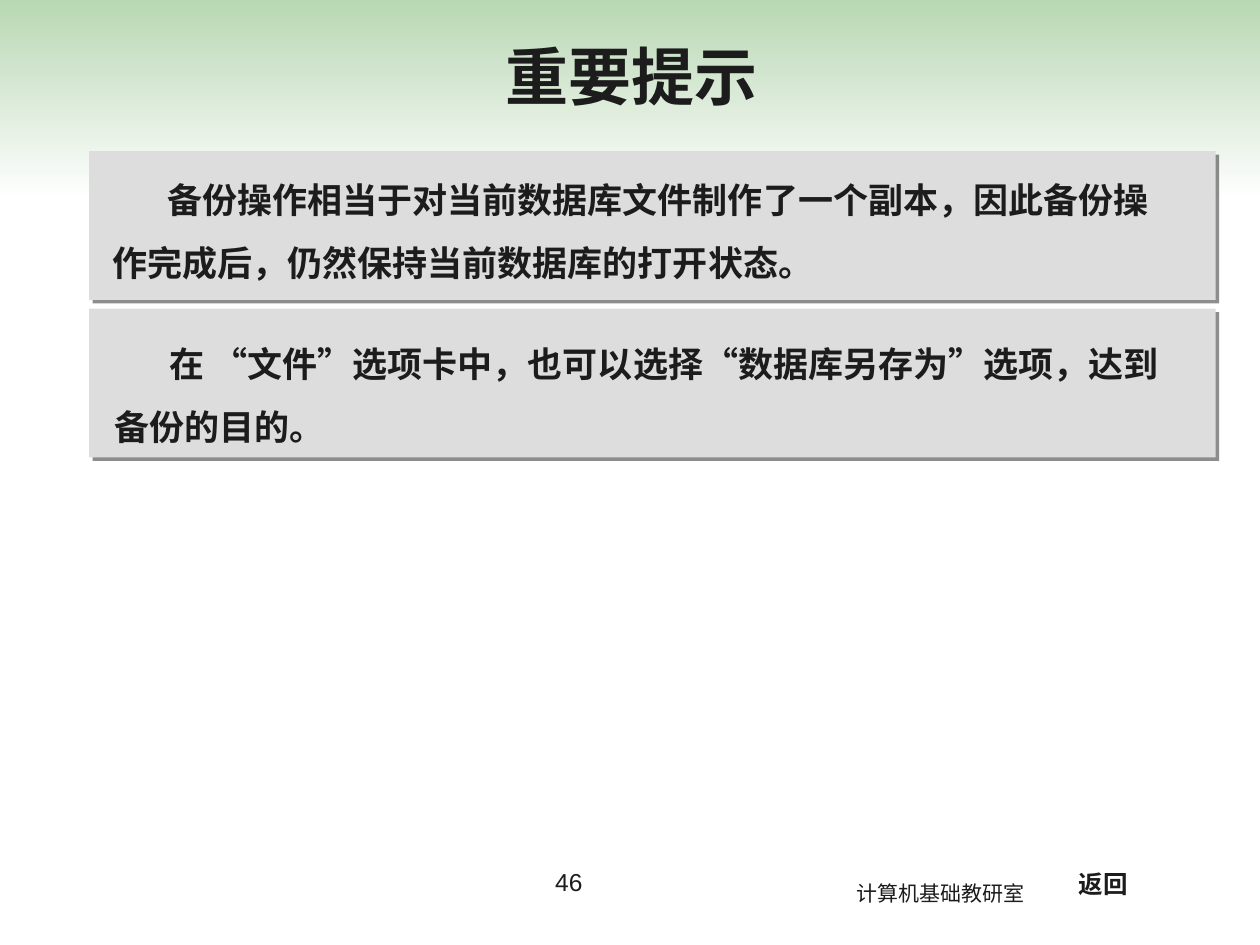
from lxml.etree import SubElement as Sub
from pptx import Presentation
from pptx.dml.color import RGBColor
from pptx.enum.shapes import MSO_SHAPE as Kind
from pptx.enum.text import MSO_ANCHOR as Anchor, PP_ALIGN as Align
from pptx.oxml.ns import qn
from pptx.util import Pt

INK = "1C1C1C"
CJK = "Noto Sans CJK JP"


def paint(color, code):
    color.rgb = RGBColor.from_string(code)


def add_rect(slide, left, top, width, height):
    rect = slide.shapes.add_shape(Kind.RECTANGLE, Pt(left), Pt(top), Pt(width), Pt(height))
    rect.shadow.inherit = False
    rect.line.fill.background()
    return rect


def add_fade(slide):
    rect = add_rect(slide, 0, 0, 720, 113)
    rect.fill.gradient()
    rect.fill.gradient_angle = 270
    for stop, code, place in zip(rect.fill.gradient_stops, ("4E9D41", "FFFFFF"), (0, 1)):
        paint(stop.color, code)
        stop.position = place
    for color in rect._element.spPr.iter(qn("a:srgbClr")):
        Sub(color, qn("a:alpha"), val="40000")


def add_panel(slide, top):
    rect = add_rect(slide, 51, top, 643.7, 85)
    rect.fill.solid()
    paint(rect.fill.fore_color, "DDDDDD")
    effects = rect._element.spPr.find(qn("a:effectLst"))
    shade = Sub(effects, qn("a:outerShdw"), dist=str(Pt(2.8)), dir="2700000", algn="ctr")
    color = Sub(shade, qn("a:srgbClr"), val=INK)
    Sub(color, qn("a:alpha"), val="50000")


def add_text(slide, text, left, top, width, height, size, bold=False,
             align=Align.CENTER, anchor=Anchor.TOP, font="Arial"):
    box = slide.shapes.add_textbox(Pt(left), Pt(top), Pt(width), Pt(height))
    frame = box.text_frame
    frame.word_wrap = True
    frame.vertical_anchor = anchor
    para = frame.paragraphs[0]
    para.alignment = align
    run = para.add_run()
    run.text = text
    run.font.size = Pt(size)
    run.font.bold = bold
    paint(run.font.color, INK)
    run.font.name = font
    Sub(run._r.get_or_add_rPr(), qn("a:ea"), typeface=CJK)
    return para


def add_body(slide, text, left, top, width):
    para = add_text(slide, text, left, top, width, 80, 20, True, Align.LEFT)
    para.line_spacing = 1.5
    para._p.get_or_add_pPr().set("indent", str(Pt(31.4)))


def main():
    deck = Presentation()
    deck.slide_width, deck.slide_height = Pt(720), Pt(540)
    slide = deck.slides.add_slide(deck.slide_layouts[6])
    add_fade(slide)
    add_text(slide, "计算机基础教研室", 482.4, 499.7, 123, 21.6, 12, align=Align.LEFT, font=CJK)
    add_panel(slide, 86.4)
    add_text(slide, "重要提示", 18.7, 0, 684, 85.7, 36, True, anchor=Anchor.MIDDLE)
    add_body(slide, "备份操作相当于对当前数据库文件制作了一个副本，因此备份操作完成后，"
             "仍然保持当前数据库的打开状态。", 57, 86.4, 624.2)
    add_text(slide, "46", 241.2, 491.8, 167.8, 37.4, 14)
    add_text(slide, "返回", 597.6, 493.2, 65.5, 24.5, 14, True)
    add_panel(slide, 176.4)
    add_body(slide, "在 “文件”选项卡中，也可以选择“数据库另存为”选项，达到备份的目的。",
             58.3, 180, 626.4)
    deck.save("out.pptx")


if __name__ == "__main__":
    main()
